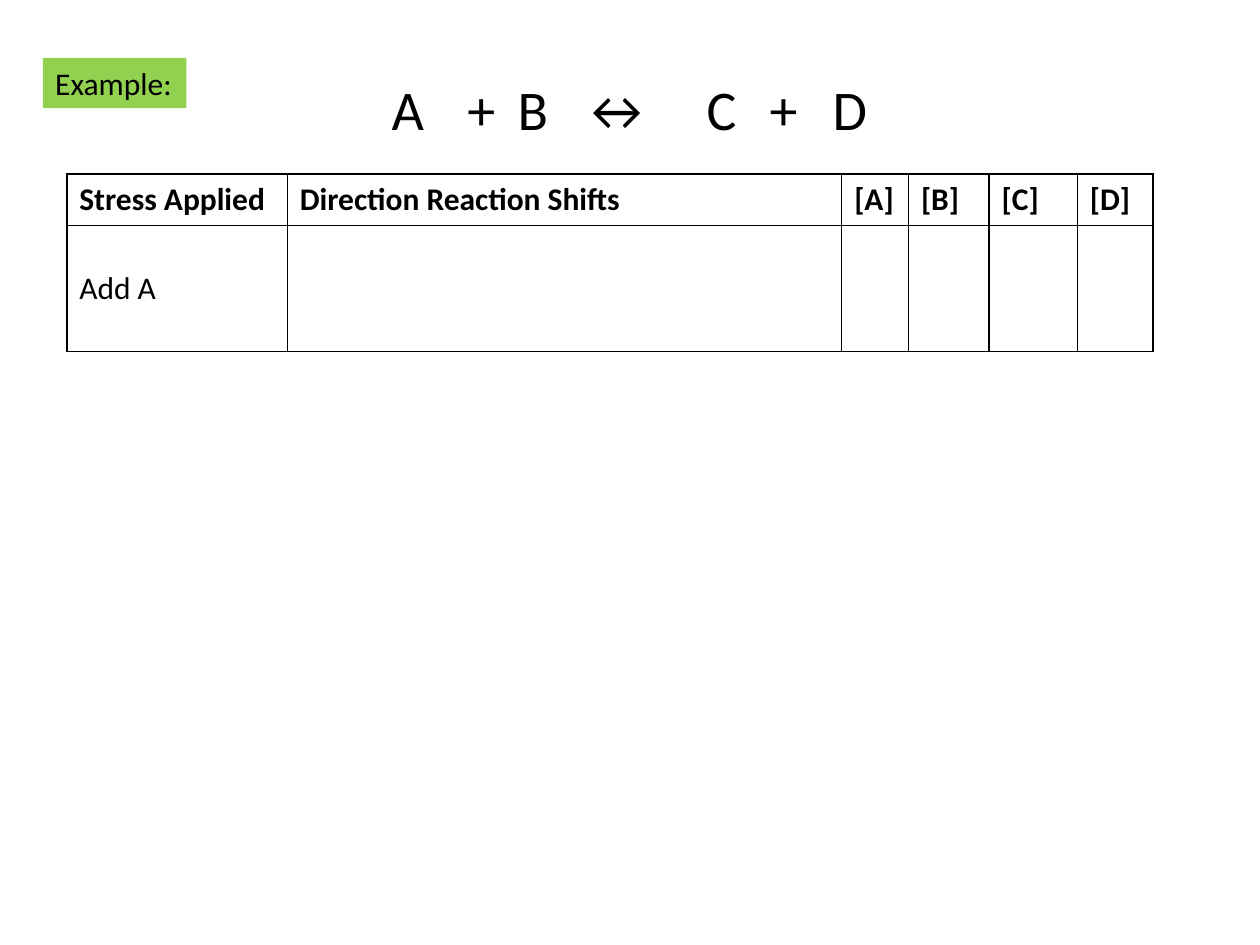
from pptx import Presentation
from pptx.dml.color import RGBColor
from pptx.enum.text import MSO_ANCHOR, MSO_AUTO_SIZE
from pptx.oxml.ns import qn
from pptx.util import Inches, Pt
from lxml import etree

MIDDLE = MSO_ANCHOR.MIDDLE
GROW = MSO_AUTO_SIZE.SHAPE_TO_FIT_TEXT
BLACK = "000000"
GREEN = "92D050"
WIDTHS = [1.75, 4.4, 0.53, 0.64, 0.7, 0.6]
HEIGHTS = [0.41, 1]
ROWS = [
    ["Stress Applied", "Direction Reaction Shifts", "[A]", "[B]", "[C]", "[D]"],
    ["Add A", "", "", "", "", ""],
]


def paint(target, color):
    """Give a fill one solid colour."""
    target.solid()
    target.fore_color.rgb = RGBColor.from_string(color)


def style(para, size, bold=False):
    """Set the font of a paragraph."""
    font = para.font
    font.name, font.size, font.bold = "Calibri", Pt(size), bold
    paint(font.fill, BLACK)


def add_label(slide, box, text, size, color=None):
    """Add one line of text, on a fill if a colour is given."""
    label = slide.shapes.add_textbox(*map(Inches, box))
    if color:
        paint(label.fill, color)
    frame = label.text_frame
    frame.word_wrap = False
    frame.auto_size = GROW
    para = frame.paragraphs[0]
    para.text = text
    style(para, size)
    return para


def add_equation(slide, box):
    """Add the reaction, its terms set on half-inch tabs."""
    para = add_label(slide, box, "A\t + \tB \t↔\tC \t+ \tD", 32)
    para._p.get_or_add_pPr().set("defTabSz", str(Inches(0.5)))


def add_borders(cell):
    """Draw a thin black line on each side of a cell."""
    props = cell._tc.get_or_add_tcPr()
    for place, side in enumerate(("lnL", "lnR", "lnT", "lnB")):
        line = etree.Element(qn(f"a:{side}"), w=str(Pt(1)))
        fill = etree.SubElement(line, qn("a:solidFill"))
        etree.SubElement(fill, qn("a:srgbClr"), val=BLACK)
        props.insert(place, line)


def add_grid(slide, box):
    """Add the table of stresses and shifts."""
    table = slide.shapes.add_table(len(ROWS), len(WIDTHS), *map(Inches, box)).table
    table.horz_banding = False
    for column, width in zip(table.columns, WIDTHS):
        column.width = Inches(width)
    for index, (row, height) in enumerate(zip(table.rows, HEIGHTS)):
        row.height = Inches(height)
        for cell, text in zip(row.cells, ROWS[index]):
            cell.text = text
            cell.vertical_anchor = MIDDLE
            cell.fill.background()
            style(cell.text_frame.paragraphs[0], 18, bold=index == 0)
            add_borders(cell)


def main():
    """Build the slide and save it."""
    deck = Presentation()
    deck.slide_width, deck.slide_height = Inches(10), Inches(7.5)
    slide = deck.slides.add_slide(deck.slide_layouts[6])
    add_label(slide, (0.34, 0.46, 1.14, 0.4), "Example:", 18, GREEN)
    add_equation(slide, (3.01, 0.54, 4.01, 0.64))
    add_grid(slide, (0.53, 1.38, sum(WIDTHS), sum(HEIGHTS)))
    deck.save("out.pptx")


if __name__ == "__main__":
    main()
